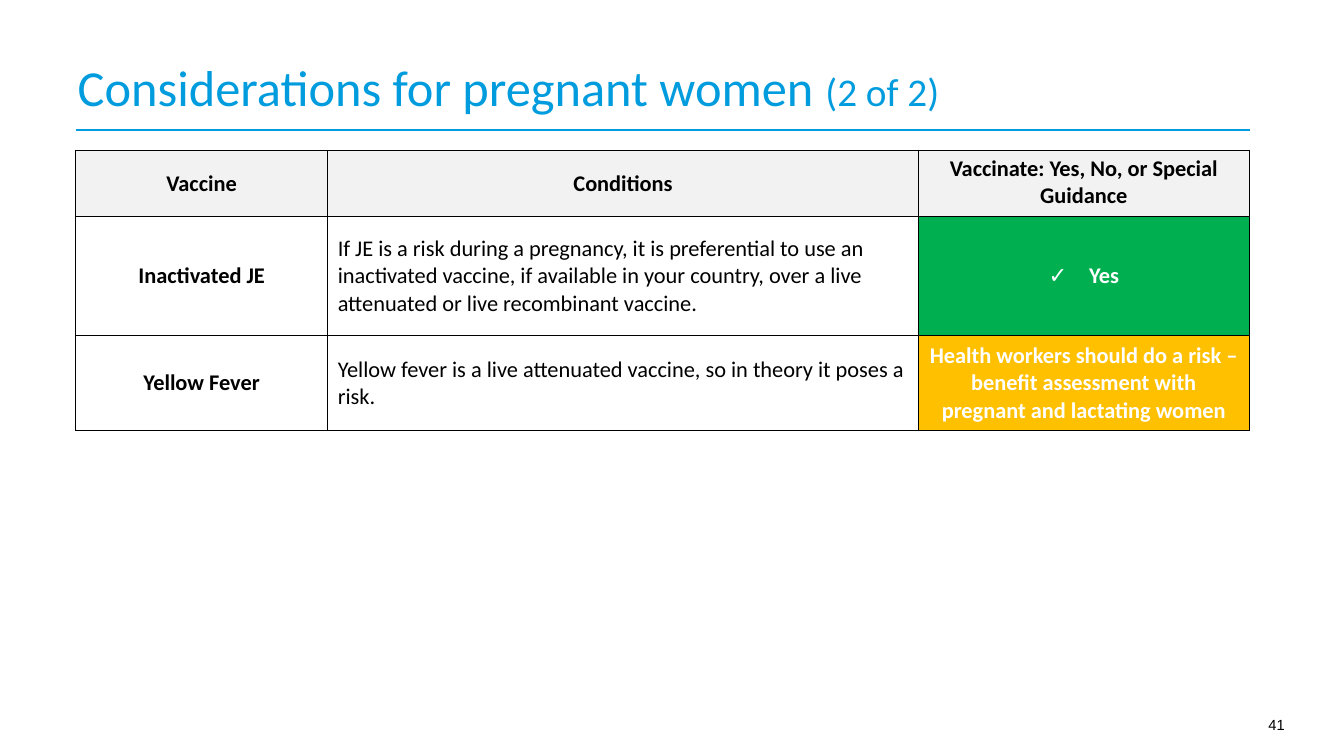
from lxml.etree import SubElement
from pptx import Presentation
from pptx.dml.color import RGBColor
from pptx.enum.shapes import MSO_CONNECTOR
from pptx.enum.text import MSO_ANCHOR, PP_ALIGN
from pptx.oxml import parse_xml
from pptx.oxml.ns import nsdecls, qn
from pptx.util import Inches, Pt

BLUE, BLACK, WHITE = "009CDE", "000000", "FFFFFF"
GREY, GREEN, AMBER = "F2F2F2", "00B050", "FFC000"

COLUMN_WIDTHS = [2.5, 5.86, 3.28]
ROW_HEIGHTS = [0.66, 1.18, 0.94]
HEADINGS = ["Vaccine", "Conditions", "Vaccinate: Yes, No, or Special Guidance"]
VACCINES = [
    ("Inactivated JE",
     "If JE is a risk during a pregnancy, it is preferential to use an "
     "inactivated vaccine, if available in your country, over a live "
     "attenuated or live recombinant vaccine.",
     "Yes", GREEN, "✓"),
    ("Yellow Fever",
     "Yellow fever is a live attenuated vaccine, so in theory it poses a risk.",
     "Health workers should do a risk –benefit assessment with pregnant "
     "and lactating women",
     AMBER, None),
]


def rgb(color):
    """Turn a hex string into a colour."""
    return RGBColor.from_string(color)


def add_text(p, text, size=16, color=BLACK, bold=False, font="Calibri", align=None):
    """Add a formatted run to a paragraph."""
    if align is not None:
        p.alignment = align
    r = p.add_run()
    r.text = text
    r.font.name = font
    r.font.size = Pt(size)
    r.font.bold = bold
    r.font.color.rgb = rgb(color)


def add_box(s, left, top, width, height, margins, anchor):
    """Add a wrapping text box and return its text frame."""
    tf = s.shapes.add_textbox(*map(Inches, (left, top, width, height))).text_frame
    tf.word_wrap = True
    tf.vertical_anchor = anchor
    tf.margin_left, tf.margin_top, tf.margin_right, tf.margin_bottom = map(Inches, margins)
    return tf


def add_title(s, left, top, width, height, rule_width):
    """Place the title and the rule beneath it."""
    tf = add_box(s, left, top, width, height, (0.02, 0, 0.39, 0), MSO_ANCHOR.BOTTOM)
    p = tf.paragraphs[0]
    p.line_spacing = 0.9
    add_text(p, "Considerations for pregnant women ", size=36, color=BLUE)
    add_text(p, "(2 of 2)", size=28, color=BLUE)
    y = Inches(top + height + 0.13)
    rule = s.shapes.add_connector(
        MSO_CONNECTOR.STRAIGHT, Inches(left), y, Inches(left + rule_width), y)
    rule.line.color.rgb = rgb(BLUE)
    rule.line.width = Pt(1.5)
    SubElement(rule._element.spPr, qn("a:effectLst"))


def add_borders(cell, color=BLACK, width=1):
    """Draw all four borders of a cell."""
    tcPr = cell._tc.get_or_add_tcPr()
    for i, side in enumerate("LRTB"):
        tcPr.insert(i, parse_xml(
            f'<a:ln{side} {nsdecls("a")} w="{Pt(width)}"><a:solidFill>'
            f'<a:srgbClr val="{color}"/></a:solidFill></a:ln{side}>'))


def set_indent(p, bullet):
    """Give a guidance paragraph its indent, bullet and tab stop."""
    p.level = 1
    step = Inches(0.4)
    pPr = p._p.get_or_add_pPr()
    pPr.set("marL", str(step if bullet else 0))
    pPr.set("indent", str(-step if bullet else 0))
    if bullet:
        SubElement(pPr, qn("a:buFont"), typeface="Arial")
        SubElement(pPr, qn("a:buChar"), char=bullet)
    else:
        SubElement(pPr, qn("a:buNone"))
    tabs = SubElement(pPr, qn("a:tabLst"))
    SubElement(tabs, qn("a:tab"), pos=str(step), algn="l")


def fill_cell(cell, text, fill=None, anchor=MSO_ANCHOR.MIDDLE, **fmt):
    """Fill, border and write one cell, returning its paragraph."""
    if fill:
        cell.fill.solid()
        cell.fill.fore_color.rgb = rgb(fill)
    else:
        cell.fill.background()
    add_borders(cell)
    cell.vertical_anchor = anchor
    p = cell.text_frame.paragraphs[0]
    add_text(p, text, **fmt)
    return p


def add_vaccine_table(s, left, top, width, height):
    """Place the table of vaccines, conditions and guidance."""
    table = s.shapes.add_table(
        len(ROW_HEIGHTS), len(COLUMN_WIDTHS),
        *map(Inches, (left, top, width, height))).table
    table.first_row = table.horz_banding = False
    for column, size in zip(table.columns, COLUMN_WIDTHS):
        column.width = Inches(size)
    for row, size in zip(table.rows, ROW_HEIGHTS):
        row.height = Inches(size)
    strong = {"bold": True, "align": PP_ALIGN.CENTER}
    for c, heading in enumerate(HEADINGS):
        anchor = MSO_ANCHOR.TOP if c == 2 else MSO_ANCHOR.MIDDLE
        fill_cell(table.cell(0, c), heading, fill=GREY, anchor=anchor, **strong)
    for r, (vaccine, condition, guidance, fill, bullet) in enumerate(VACCINES, 1):
        fill_cell(table.cell(r, 0), vaccine, **strong)
        fill_cell(table.cell(r, 1), condition)
        p = fill_cell(table.cell(r, 2), guidance, fill=fill, color=WHITE, **strong)
        set_indent(p, bullet)


def add_page_number(s, left, top, width, height):
    """Place the page number."""
    tf = add_box(s, left, top, width, height, (0.1, 0.05, 0.1, 0.05), MSO_ANCHOR.TOP)
    add_text(tf.paragraphs[0], "41", size=10.5, font="Arial", align=PP_ALIGN.RIGHT)


def main():
    """Build and save the slide."""
    prs = Presentation()
    prs.slide_width, prs.slide_height = Inches(13.33), Inches(7.5)
    s = prs.slides.add_slide(prs.slide_layouts[6])
    add_page_number(s, 11.95, 7.05, 0.89, 0.29)
    add_vaccine_table(s, 0.75, 1.49, sum(COLUMN_WIDTHS), sum(ROW_HEIGHTS))
    add_title(s, 0.75, 0.37, 9.85, 0.79, rule_width=11.65)
    prs.save("out.pptx")


if __name__ == "__main__":
    main()
